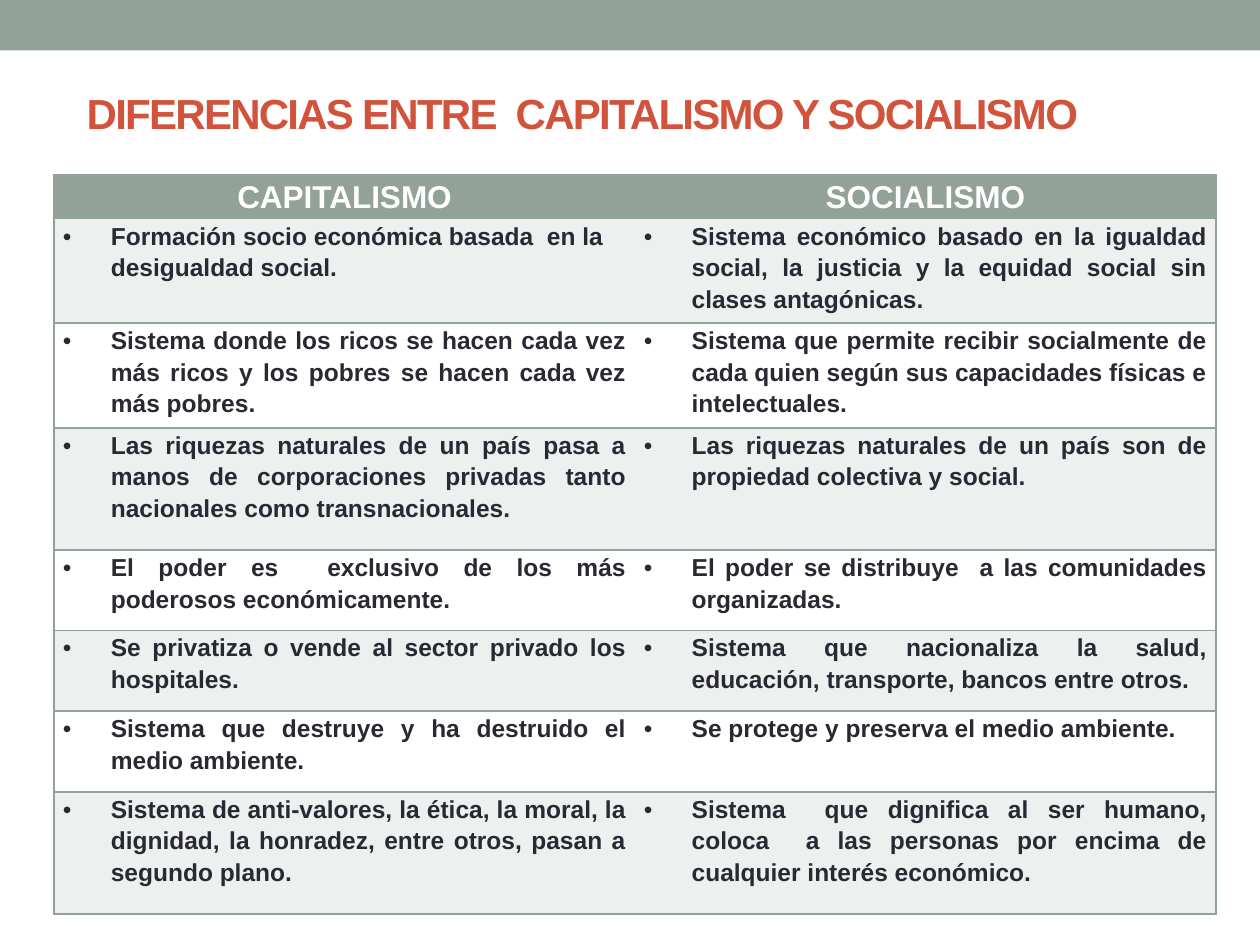
from lxml.etree import SubElement
from pptx import Presentation
from pptx.dml.color import RGBColor
from pptx.enum.shapes import MSO_SHAPE as Shape
from pptx.enum.text import MSO_ANCHOR as Anchor, PP_ALIGN as Align
from pptx.oxml.ns import qn
from pptx.util import Inches, Pt

FONT = "Arial"
COLORS = {
    "sage": "93A299",
    "band": "EEF0EF",
    "white": "FFFFFF",
    "title": "D2533C",
    "text": "292934",
}
TITLE = "DIFERENCIAS ENTRE  CAPITALISMO Y SOCIALISMO"
HEADERS = ("CAPITALISMO", "SOCIALISMO")
DIFFERENCES = [
    ("Formación socio económica basada  en la desigualdad social.",
     "Sistema económico basado en la igualdad social, la justicia y la equidad social sin clases antagónicas."),
    ("Sistema donde los ricos se hacen cada vez más ricos y los pobres se hacen cada vez más pobres.",
     "Sistema que permite recibir socialmente de cada quien según sus capacidades físicas e intelectuales."),
    ("Las riquezas naturales de un país pasa a manos de corporaciones privadas tanto nacionales como transnacionales.",
     "Las riquezas naturales de un país son de propiedad colectiva y social."),
    ("El poder es  exclusivo de los más poderosos económicamente.",
     "El poder se distribuye  a las comunidades organizadas."),
    ("Se privatiza o vende al sector privado los hospitales.",
     "Sistema que nacionaliza la salud, educación, transporte, bancos entre otros. "),
    ("Sistema que destruye y ha destruido el medio ambiente.",
     "Se protege y preserva el medio ambiente."),
    ("Sistema de anti-valores, la ética, la moral, la dignidad, la honradez, entre otros, pasan a segundo plano.",
     "Sistema  que dignifica al ser humano, coloca  a las personas por encima de cualquier interés económico."),
]
ROW_HEIGHTS = (0.33, 0.83, 0.83, 0.97, 0.64, 0.64, 0.64, 0.97)
COLUMN_WIDTH = 4.61


def color(name):
    return RGBColor.from_string(COLORS[name])


def add_run(paragraph, text, size, color_name):
    run = paragraph.add_run()
    run.text = text
    run.font.name = FONT
    run.font.size = Pt(size)
    run.font.bold = True
    run.font.color.rgb = color(color_name)
    return run


def add_bullet(paragraph):
    properties = paragraph._p.get_or_add_pPr()
    properties.set("marL", str(Inches(0.38)))
    properties.set("indent", str(Inches(-0.38)))
    SubElement(properties, qn("a:buFont"), typeface=FONT)
    SubElement(properties, qn("a:buChar"), char="•")


def set_borders(cell, hidden_side):
    properties = cell._tc.get_or_add_tcPr()
    for side in "LRTB":
        line = SubElement(properties, qn(f"a:ln{side}"), w=str(Pt(1)))
        if side == hidden_side:
            SubElement(line, qn("a:noFill"))
        else:
            fill = SubElement(line, qn("a:solidFill"))
            SubElement(fill, qn("a:srgbClr"), val=COLORS["sage"])


def fill_cell(cell, text, row, column):
    cell.margin_left = cell.margin_right = Inches(0.07)
    cell.margin_top = cell.margin_bottom = 0
    set_borders(cell, "R" if column == 0 else "L")
    cell.fill.solid()
    paragraph = cell.text_frame.paragraphs[0]
    paragraph.line_spacing = 1.15
    if row == 0:
        cell.fill.fore_color.rgb = color("sage")
        paragraph.alignment = Align.CENTER
        add_run(paragraph, text, 18, "white")
    else:
        cell.fill.fore_color.rgb = color("band" if row % 2 else "white")
        # The first difference on the left is the only one not justified
        paragraph.alignment = Align.LEFT if (row, column) == (1, 0) else Align.JUSTIFY
        add_bullet(paragraph)
        add_run(paragraph, text, 14, "text")


def main():
    presentation = Presentation()
    presentation.slide_width = Inches(10)
    presentation.slide_height = Inches(7.5)
    slide = presentation.slides.add_slide(presentation.slide_layouts[6])

    # Top band
    band = slide.shapes.add_shape(Shape.RECTANGLE, 0, 0, Inches(10), Inches(0.4))
    band.shadow.inherit = False
    band.fill.solid()
    band.fill.fore_color.rgb = color("sage")
    band.line.fill.background()

    # Title
    title = slide.shapes.add_textbox(Inches(0.59), Inches(0.29), Inches(8.5), Inches(0.85))
    title.text_frame.word_wrap = True
    title.text_frame.vertical_anchor = Anchor.BOTTOM
    run = add_run(title.text_frame.paragraphs[0], TITLE, 24, "title")
    run.font._element.set("spc", "-100")

    # Comparison table
    rows = [HEADERS, *DIFFERENCES]
    table = slide.shapes.add_table(
        len(rows), len(HEADERS), Inches(0.43), Inches(1.39),
        Inches(COLUMN_WIDTH * len(HEADERS)), Inches(sum(ROW_HEIGHTS))).table
    table.first_row = table.horz_banding = False
    for column in table.columns:
        column.width = Inches(COLUMN_WIDTH)
    for row, (texts, height) in enumerate(zip(rows, ROW_HEIGHTS)):
        table.rows[row].height = Inches(height)
        for column, text in enumerate(texts):
            fill_cell(table.cell(row, column), text, row, column)

    presentation.save("out.pptx")


if __name__ == "__main__":
    main()
